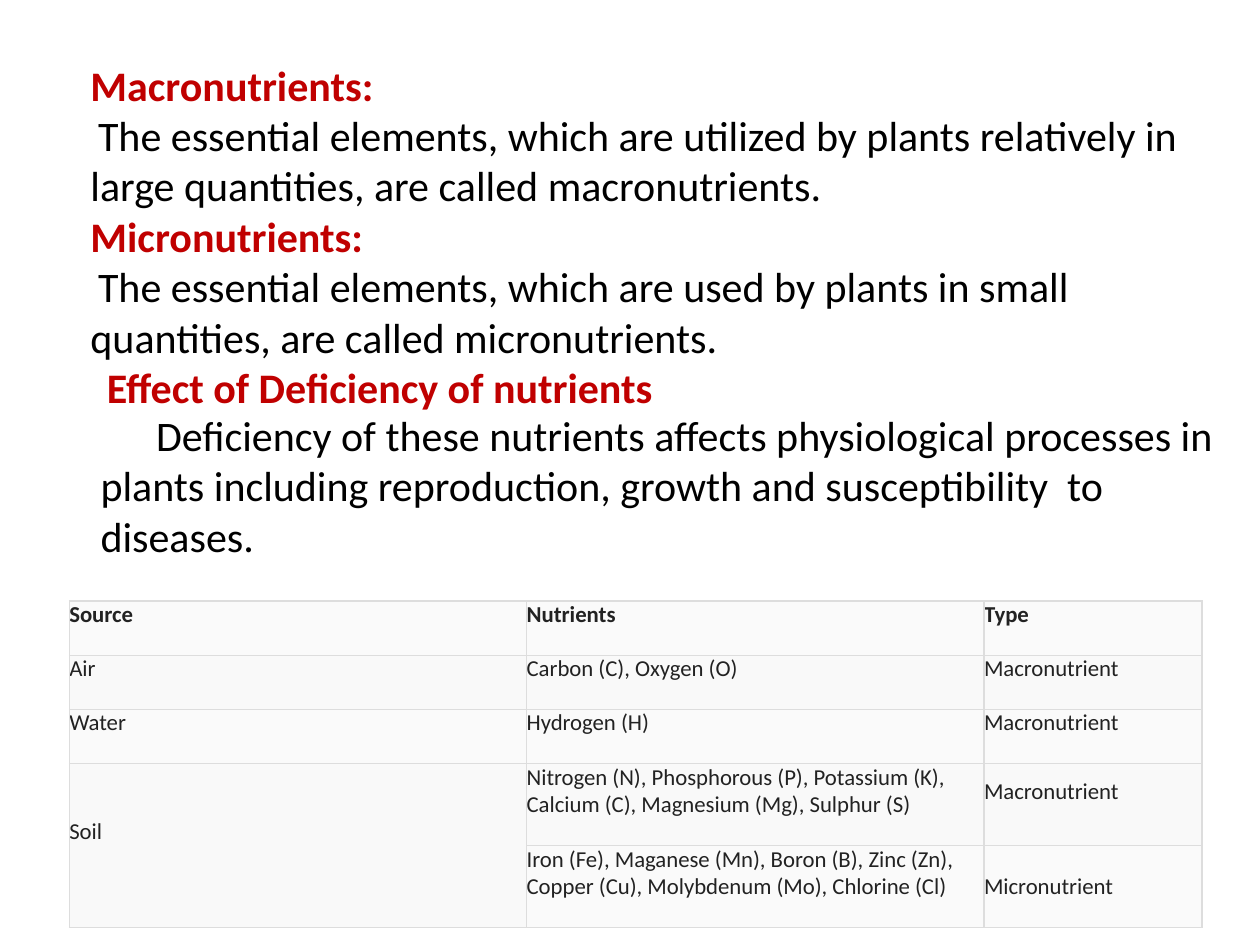
from lxml.etree import SubElement
from pptx import Presentation
from pptx.dml.color import RGBColor
from pptx.enum.text import MSO_ANCHOR
from pptx.oxml.ns import qn
from pptx.util import Inches, Pt

FONT = "Calibri"
RED, BLACK, INK, BORDER = "C00000", "000000", "222222", "DDDDDD"
STRIPES = ("FAFAFA", "F9F9F9")

# text, is heading, left margin, first-line indent
DEFINITIONS = [
    ("Macronutrients:", True, 0.62, 0),
    ("The essential elements, which are utilized by plants relatively in "
     "large quantities, are called macronutrients.", False, 0.62, 0.06),
    ("Micronutrients:", True, 0.62, 0),
    ("The essential elements, which are used by plants in small "
     "quantities, are called micronutrients.", False, 0.62, 0.06),
    ("Effect of Deficiency of nutrients", True, 0.62, 0.13),
]
DEFICIENCY = [
    ("Deficiency of these nutrients affects physiological processes in plants "
     "including reproduction, growth and susceptibility  to diseases.", False, 0, 0.44),
]
NUTRIENTS = [
    ("Source", "Nutrients", "Type"),
    ("Air", "Carbon (C), Oxygen (O)", "Macronutrient"),
    ("Water", "Hydrogen (H)", "Macronutrient"),
    ("Soil", "Nitrogen (N), Phosphorous (P), Potassium (K), "
     "Calcium (C), Magnesium (Mg), Sulphur (S)", "Macronutrient"),
    ("", "Iron (Fe), Maganese (Mn), Boron (B), Zinc (Zn), "
     "Copper (Cu), Molybdenum (Mo), Chlorine (Cl)", "Micronutrient"),
]
COLUMN_WIDTHS = (3.63, 3.63, 1.73)
ROW_HEIGHTS = (0.43, 0.43, 0.43, 0.65, 0.65)
CELL_GAP = 0.21  # space kept free below the text of a cell


def rgb(value):
    return RGBColor.from_string(value)


def style(para, size, color, bold):
    for span in para.runs:
        span.font.name = FONT
        span.font.size = Pt(size)
        span.font.bold = bold
        span.font.color.rgb = rgb(color)


def add_text(slide, place, paragraphs):
    box = slide.shapes.add_textbox(*map(Inches, place))
    frame = box.text_frame
    frame.word_wrap = True
    frame.text = "\n".join(text for text, *_ in paragraphs)
    for para, (_, heading, margin, indent) in zip(frame.paragraphs, paragraphs):
        properties = para._p.get_or_add_pPr()
        properties.set("marL", str(Inches(margin)))
        properties.set("indent", str(Inches(indent)))
        style(para, 24, RED if heading else BLACK, heading)


def add_borders(cell):
    properties = cell._tc.get_or_add_tcPr()
    for side in ("lnL", "lnR", "lnT", "lnB"):
        line = SubElement(properties, qn(f"a:{side}"), w=str(Pt(0.75)))
        fill = SubElement(line, qn("a:solidFill"))
        SubElement(fill, qn("a:srgbClr"), val=BORDER)


def add_nutrient_table(slide):
    rows, columns = len(ROW_HEIGHTS), len(COLUMN_WIDTHS)
    table = slide.shapes.add_table(
        rows, columns, Inches(0.55), Inches(4.77),
        Inches(sum(COLUMN_WIDTHS)), Inches(sum(ROW_HEIGHTS))).table
    table.first_row = table.horz_banding = False
    for column, width in zip(table.columns, COLUMN_WIDTHS):
        column.width = Inches(width)
    for row, height in zip(table.rows, ROW_HEIGHTS):
        row.height = Inches(height)
    table.cell(3, 0).merge(table.cell(4, 0))

    for r, texts in enumerate(NUTRIENTS):
        for c, text in enumerate(texts):
            cell = table.cell(r, c)
            add_borders(cell)
            cell.fill.solid()
            cell.fill.fore_color.rgb = rgb(STRIPES[r % 2])
            cell.margin_left = cell.margin_right = cell.margin_top = 0
            last = (r, c) == (rows - 1, columns - 1)
            cell.margin_bottom = 0 if last else Inches(CELL_GAP)
            cell.vertical_anchor = MSO_ANCHOR.MIDDLE
            if not cell.is_spanned:
                cell.text = text
                style(cell.text_frame.paragraphs[0], 13, INK, r == 0)


def main():
    deck = Presentation()
    deck.slide_width, deck.slide_height = Inches(10), Inches(7.5)
    page = deck.slides.add_slide(deck.slide_layouts[6])
    add_text(page, (0, 0.42, 10, 2.91), DEFINITIONS)
    add_text(page, (0.7, 3.2, 9.3, 1.31), DEFICIENCY)
    add_nutrient_table(page)
    deck.save("out.pptx")


if __name__ == "__main__":
    main()
